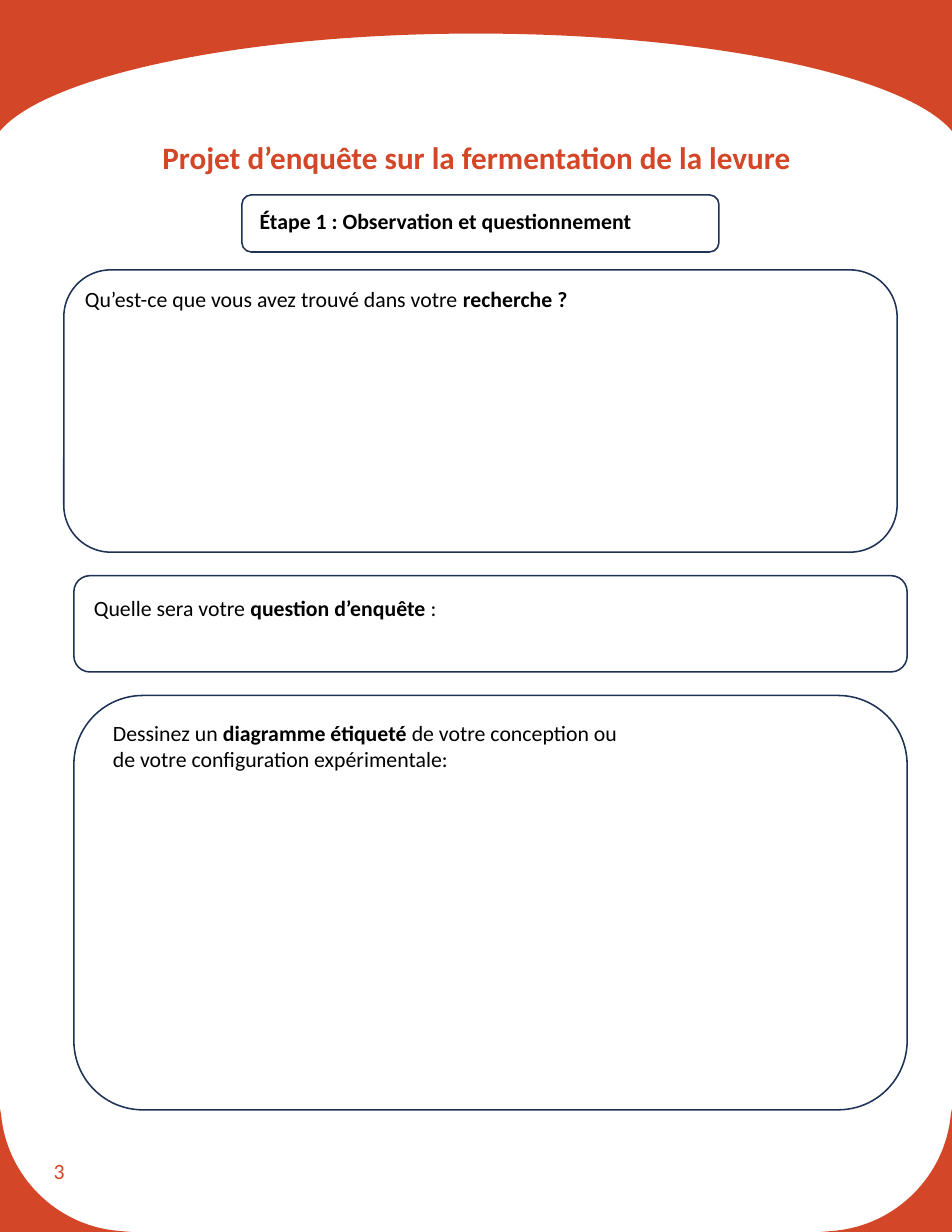
from pptx import Presentation
from pptx.dml.color import RGBColor
from pptx.enum import shapes, text
from pptx.oxml.ns import qn
from pptx.util import Inches, Pt

ORANGE = RGBColor(0xD3, 0x47, 0x28)
NAVY = RGBColor(0x1E, 0x32, 0x56)
WHITE = RGBColor(0xFF, 0xFF, 0xFF)
BLACK = RGBColor(0, 0, 0)

WIDTH, HEIGHT = 8.5, 11
FONT = "Calibri"

# Outlines: one point is a straight segment, three points are a Bézier curve
HEADER = [
    [(0, 0)], [(WIDTH, 0)], [(WIDTH, 1.17)],
    [(8.09, 0.68), (6.34, 0.3), (4.25, 0.3)],
    [(2.16, 0.3), (0.41, 0.68), (0, 1.17)],
]
CORNER = [
    [(0, 9.9)], [(0.01, 9.95)],
    [(0.06, 10.5), (0.5, 10.94), (1.05, 10.99)],
    [(1.17, HEIGHT)], [(0, HEIGHT)],
]

# Panel frame, text frame, fill, paragraphs of (text, bold) spans
PANELS = [
    ((0.66, 5.14, 7.44, 0.86), (0.74, 5.26, 7.26, 0.34), WHITE,
     [[("Quelle sera votre ", False), ("question d’enquête ", True), (":", False)]]),
    ((0.57, 2.41, 7.44, 2.52), (0.66, 2.5, 5.43, 0.34), None,
     [[("Qu’est-ce que vous avez trouvé dans votre ", False), ("recherche ?", True)]]),
    ((2.16, 1.74, 4.26, 0.51), (2.22, 1.81, 4.13, 0.34), None,
     [[("Étape 1 : Observation et questionnement", True)]]),
    ((0.66, 6.21, 7.44, 3.7), (0.91, 6.38, 5.66, 0.57), None,
     [[("Dessinez un ", False), ("diagramme étiqueté ", True),
       ("de votre conception ou", False)],
      [("de votre configuration expérimentale:", False)]]),
]


def mirror(outline):
    return [[(WIDTH - x, y) for x, y in segment] for segment in outline]


def add_outline(page, outline):
    points = [(Inches(x), Inches(y)) for segment in outline for x, y in segment]
    builder = page.shapes.build_freeform(*points[0])
    builder.add_line_segments(points[1:], close=True)
    shape = builder.convert_to_shape()
    shape.shadow.inherit = False
    shape.fill.solid()
    shape.fill.fore_color.rgb = ORANGE
    shape.line.fill.background()

    # Join each run of three curve points into one Bézier segment
    lines = iter(shape._element.findall(".//" + qn("a:lnTo")))
    for segment in outline[1:]:
        steps = [next(lines) for _ in segment]
        if len(steps) == 3:
            steps[0].tag = qn("a:cubicBezTo")
            for step in steps[1:]:
                steps[0].append(step[0])
                step.getparent().remove(step)


def add_frame(parent, place, fill):
    frame = parent.shapes.add_shape(
        shapes.MSO_SHAPE.ROUNDED_RECTANGLE, *map(Inches, place))
    frame.shadow.inherit = False
    if fill is None:
        frame.fill.background()
    else:
        frame.fill.solid()
        frame.fill.fore_color.rgb = fill
    frame.line.color.rgb = NAVY
    frame.line.width = Pt(1)


def add_text(parent, place, paragraphs, size=14, color=BLACK, anchor=None, **formats):
    box = parent.shapes.add_textbox(*map(Inches, place))
    frame = box.text_frame
    frame.word_wrap = True
    frame.vertical_anchor = anchor
    for index, spans in enumerate(paragraphs):
        para = frame.add_paragraph() if index else frame.paragraphs[0]
        for name, value in formats.items():
            setattr(para, name, value)
        for words, bold in spans:
            span = para.add_run()
            span.text = words
            for name, value in {"name": FONT, "size": Pt(size), "bold": bold}.items():
                setattr(span.font, name, value)
            span.font.color.rgb = color


def add_panel(page, frame_place, text_place, fill, paragraphs):
    group = page.shapes.add_group_shape()
    add_frame(group, frame_place, fill)
    add_text(group, text_place, paragraphs)


def main():
    deck = Presentation()
    deck.slide_width, deck.slide_height = Inches(WIDTH), Inches(HEIGHT)
    page = deck.slides.add_slide(deck.slide_layouts[6])

    # Arched header and rounded bottom corners
    for outline in (HEADER, CORNER, mirror(CORNER)):
        add_outline(page, outline)

    # Page number and title
    add_text(page, (0.38, 10.16, 1.91, 0.59), [[("3", False)]],
             color=ORANGE, anchor=text.MSO_ANCHOR.MIDDLE)
    add_text(page, (0.36, 1.09, 7.79, 0.86),
             [[("Projet d’enquête sur la fermentation de la levure", True)]],
             size=20, color=ORANGE, alignment=text.PP_ALIGN.CENTER, line_spacing=1.3)

    # Answer panels
    for panel in PANELS:
        add_panel(page, *panel)

    deck.save("out.pptx")


if __name__ == "__main__":
    main()
